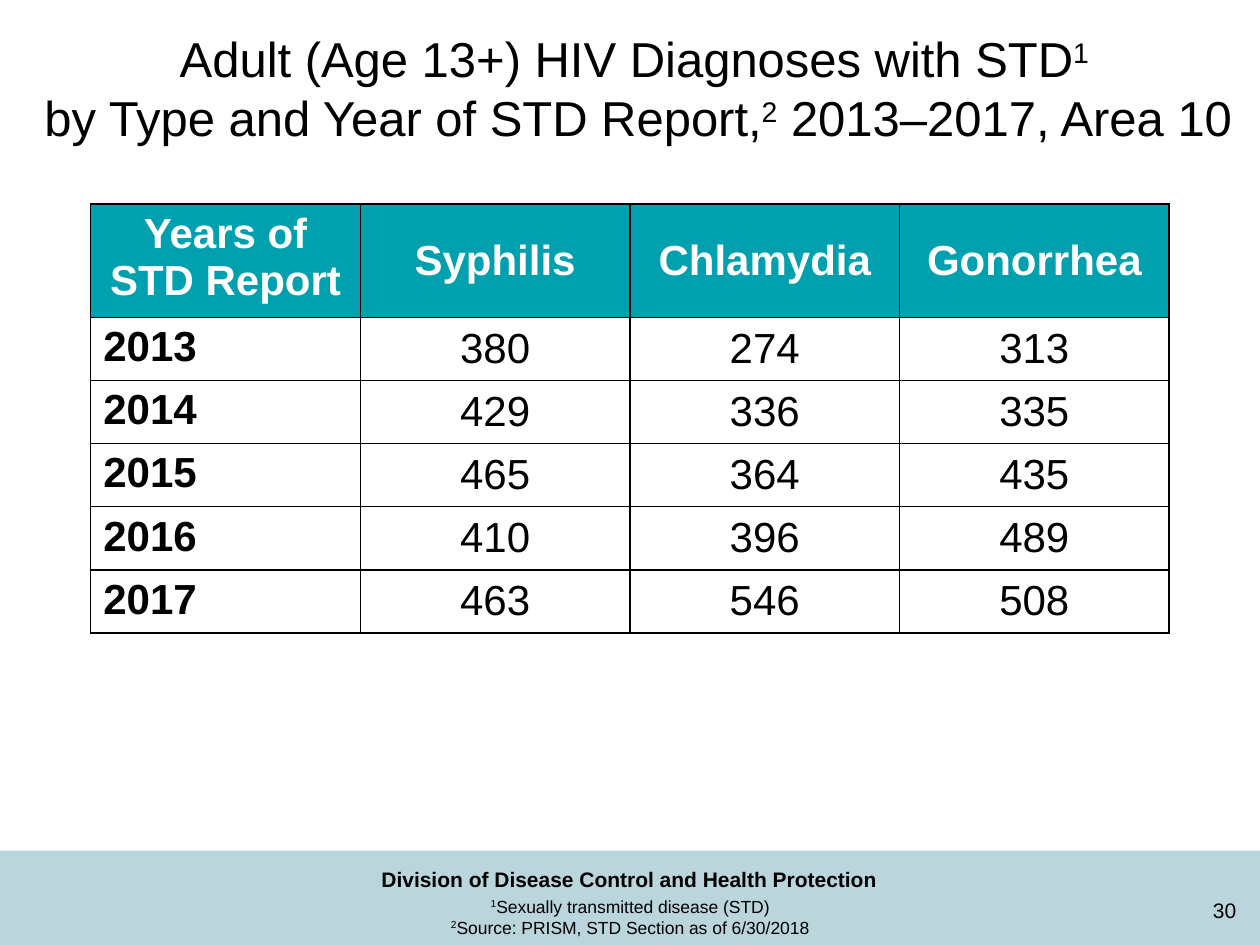
from pptx import Presentation
from pptx.dml.color import RGBColor
from pptx.enum.shapes import MSO_SHAPE
from pptx.enum.text import MSO_ANCHOR, PP_ALIGN
from pptx.oxml import parse_xml
from pptx.oxml.ns import nsdecls
from pptx.util import Inches, Pt


def color(code):
    """Turn a hex string into a colour."""
    return RGBColor.from_string(code)


class Deck:
    """Hold the style and the current slide."""

    font, ink, paper, teal, pale = "Arial", "000000", "FFFFFF", "00A0AF", "BBD5DC"

    def __init__(self):
        """Start a deck with one title-only slide."""
        self.file = Presentation()
        self.file.slide_width, self.file.slide_height = Inches(10), Inches(7.5)
        self.slide = self.file.slides.add_slide(self.file.slide_layouts[5])

    def put(self, frame, lines, size, align=PP_ALIGN.CENTER, bold=False, ink=ink):
        """Put lines of (text, raised) runs into a frame."""
        for i, line in enumerate(lines):
            para = frame.add_paragraph() if i else frame.paragraphs[0]
            para.alignment = align
            for text, high in line:
                run = para.add_run()
                run.text = text
                font = run.font
                font.name, font.size, font.bold = self.font, Pt(size), bold
                font.color.rgb = color(ink)
                if high:
                    font._element.set("baseline", "30000")

    def title(self, box, lines, size):
        """Place and fill the title."""
        shape = self.slide.shapes.title
        shape.left, shape.top, shape.width, shape.height = map(Inches, box)
        frame = shape.text_frame
        frame.word_wrap, frame.vertical_anchor = True, MSO_ANCHOR.TOP
        self.put(frame, lines, size)

    def text(self, box, lines, size, anchor=MSO_ANCHOR.TOP, **look):
        """Add a text box."""
        frame = self.slide.shapes.add_textbox(*map(Inches, box)).text_frame
        frame.word_wrap, frame.vertical_anchor = True, anchor
        self.put(frame, lines, size, **look)

    def band(self, box, fill):
        """Add a plain filled rectangle."""
        shape = self.slide.shapes.add_shape(MSO_SHAPE.RECTANGLE, *map(Inches, box))
        shape.shadow.inherit = False
        shape.fill.solid()
        shape.fill.fore_color.rgb = color(fill)
        shape.line.fill.background()

    def edge(self, cell):
        """Draw all four borders of a cell."""
        props = cell._tc.get_or_add_tcPr()
        for i, side in enumerate(("lnL", "lnR", "lnT", "lnB")):
            props.insert(i, parse_xml(
                f'<a:{side} {nsdecls("a")} w="12700"><a:solidFill>'
                f'<a:srgbClr val="{self.ink}"/></a:solidFill></a:{side}>'))

    def table(self, box, rows, heights, size):
        """Add a table with a header row and a label column."""
        shape = self.slide.shapes.add_table(len(rows), len(rows[0]), *map(Inches, box))
        grid = shape.table
        grid.horz_banding = grid.first_row = False
        for r, row in enumerate(rows):
            grid.rows[r].height = Inches(heights[r])
            for c, text in enumerate(row):
                cell = grid.cell(r, c)
                cell.fill.solid()
                cell.fill.fore_color.rgb = color(self.paper if r else self.teal)
                cell.vertical_anchor = MSO_ANCHOR.MIDDLE if c else MSO_ANCHOR.TOP
                self.put(cell.text_frame, [[(text, False)]], size,
                         PP_ALIGN.LEFT if r and not c else PP_ALIGN.CENTER,
                         not (r and c), self.ink if r else self.paper)
                self.edge(cell)


def main():
    """Build and save the slide."""
    deck = Deck()
    deck.band((0, 6.75, 10, 0.75), deck.pale)
    deck.text((7.58, 7.02, 2.33, 0.4), [[("30", False)]], 12,
              MSO_ANCHOR.MIDDLE, align=PP_ALIGN.RIGHT)
    deck.text((2.62, 6.83, 4.75, 0.3),
              [[("Division of Disease Control and Health Protection", False)]],
              12, bold=True)
    rows = [
        ("Years of STD Report", "Syphilis", "Chlamydia", "Gonorrhea"),
        ("2013", "380", "274", "313"),
        ("2014", "429", "336", "335"),
        ("2015", "465", "364", "435"),
        ("2016", "410", "396", "489"),
        ("2017", "463", "546", "508"),
    ]
    deck.table((0.72, 1.62, 8.56, 3.4), rows, [0.9] + [0.5] * 5, 24)
    deck.text((2.29, 7.06, 5.42, 0.44), [
        [("1", True), ("Sexually transmitted disease (STD)", False)],
        [("2", True), ("Source: PRISM, STD Section as of 6/30/2018", False)],
    ], 10)
    deck.title((-0.27, 0.18, 10.67, 1.04), [
        [("Adult (Age 13+) HIV Diagnoses with STD", False), ("1 ", True)],
        [("by Type and Year of STD Report,", False), ("2", True),
         (" 2013–2017, Area 10", False)],
    ], 28)
    deck.file.save("out.pptx")


if __name__ == "__main__":
    main()
